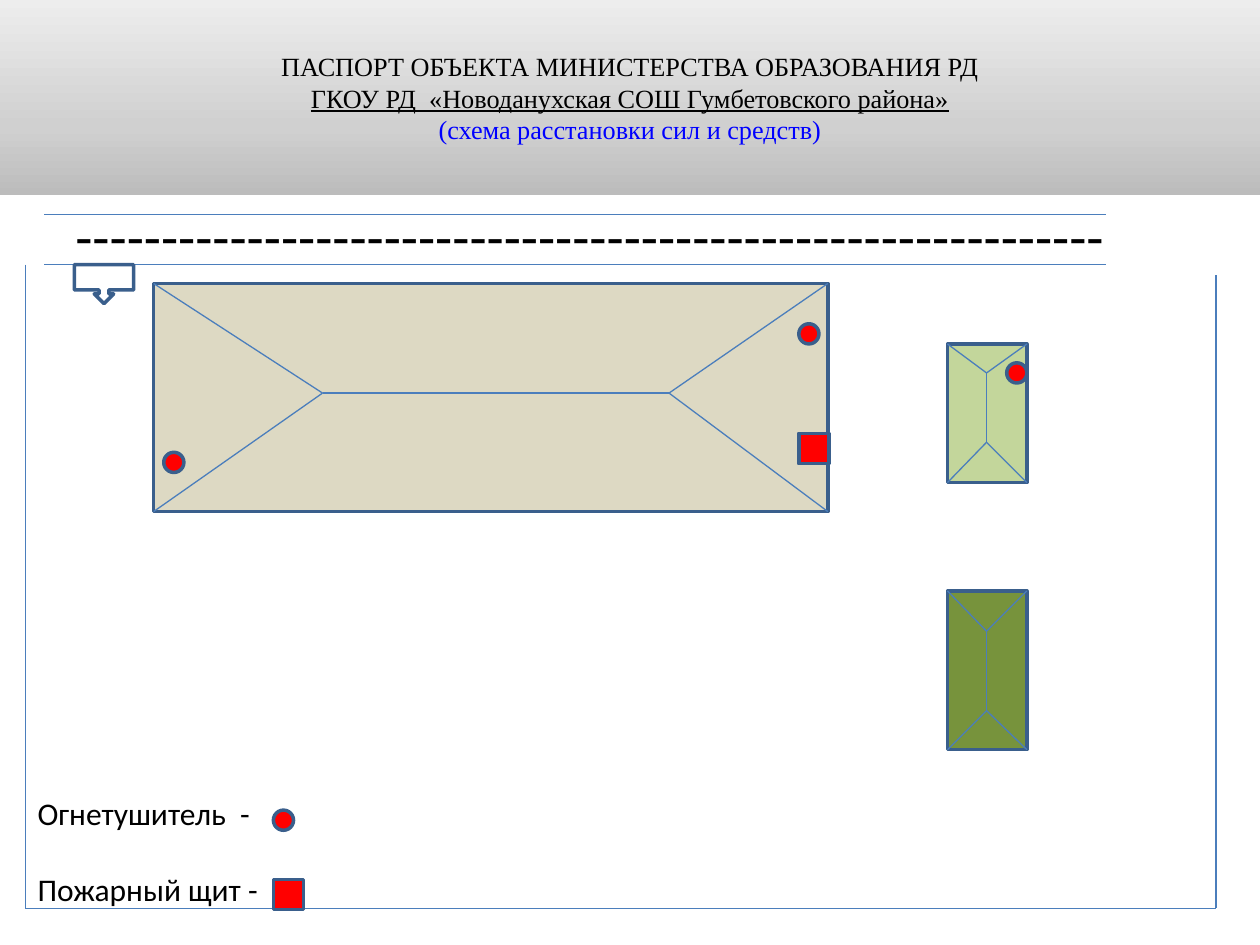
from copy import deepcopy

from lxml import etree
from pptx import Presentation
from pptx.dml.color import RGBColor
from pptx.enum.shapes import MSO_CONNECTOR, MSO_SHAPE
from pptx.enum.text import MSO_ANCHOR, PP_ALIGN
from pptx.oxml.ns import qn
from pptx.util import Inches, Pt

RECTANGLE = MSO_SHAPE.RECTANGLE
CIRCLE = MSO_SHAPE.FLOWCHART_CONNECTOR
CALLOUT = MSO_SHAPE.DOWN_ARROW_CALLOUT
STRAIGHT = MSO_CONNECTOR.STRAIGHT
CENTER = PP_ALIGN.CENTER
TOP, MIDDLE = MSO_ANCHOR.TOP, MSO_ANCHOR.MIDDLE

BLACK = RGBColor(0x00, 0x00, 0x00)
WHITE = RGBColor(0xFF, 0xFF, 0xFF)
BLUE = RGBColor(0x00, 0x00, 0xFF)
RED = RGBColor(0xFF, 0x00, 0x00)
OUTLINE = RGBColor(0x3A, 0x5F, 0x8C)
THIN_LINE = RGBColor(0x4B, 0x7E, 0xBC)
BEIGE = RGBColor(0xDD, 0xD9, 0xC3)
LIGHT_GREEN = RGBColor(0xC3, 0xD6, 0x9B)
DARK_GREEN = RGBColor(0x77, 0x93, 0x3C)
HEADER_STOPS = [
    (0, RGBColor(0xBC, 0xBC, 0xBC)),
    (0.35, RGBColor(0xD0, 0xD0, 0xD0)),
    (1, RGBColor(0xED, 0xED, 0xED)),
]

SLIDE_WIDTH, SLIDE_HEIGHT = 10, 7.5
HEADER_HEIGHT = 1.55
TITLE_LINES = [
    ("ПАСПОРТ ОБЪЕКТА МИНИСТЕРСТВА ОБРАЗОВАНИЯ РД", BLACK, False),
    ("ГКОУ РД  «Новоданухская СОШ Гумбетовского района»", BLACK, True),
    ("(схема расстановки сил и средств)", BLUE, False),
]
ROAD_MARKING = "-" * 60
LEGEND = ["Огнетушитель  -", "Пожарный щит -"]

# Each building: left, top, width, height, colour, ridge start, ridge end
BUILDINGS = [
    (1.22, 2.25, 5.35, 1.81, BEIGE, (2.56, 3.12), (5.31, 3.12)),
    (7.52, 2.73, 0.63, 1.1, LIGHT_GREEN, (7.83, 2.96), (7.83, 3.51)),
    (7.52, 4.69, 0.63, 1.26, DARK_GREEN, (7.83, 5.01), (7.83, 5.64)),
]
ROAD_LEFT, ROAD_RIGHT = 0.35, 8.78
ROAD_EDGES = [1.7, 2.1]
FENCE = [(0.2, 2.1), (0.2, 7.21), (9.65, 7.21), (9.65, 2.18)]
EXTINGUISHER_SIZE, SHIELD_SIZE = 0.16, 0.24
EXTINGUISHERS = [(6.34, 2.57), (1.3, 3.59), (7.99, 2.88), (2.17, 6.43)]
SHIELDS = [(6.34, 3.44), (2.17, 6.98)]


def add_block(slide, kind, left, top, width, height, color):
    shape = slide.shapes.add_shape(
        kind, Inches(left), Inches(top), Inches(width), Inches(height))
    shape.shadow.inherit = False
    shape.fill.solid()
    shape.fill.fore_color.rgb = color
    shape.line.color.rgb = OUTLINE
    shape.line.width = Pt(2)
    return shape


def add_line(slide, start, end):
    line = slide.shapes.add_connector(
        STRAIGHT, *(Inches(value) for value in (*start, *end)))
    line.line.color.rgb = THIN_LINE
    line.line.width = Pt(0.75)
    etree.SubElement(line._element.spPr, qn("a:effectLst"))


def format_run(paragraph, font_name, size, color=BLACK, underline=False):
    font = paragraph.runs[0].font
    font.name = font_name
    font.size = Pt(size)
    font.color.rgb = color
    font.underline = underline


def add_text(slide, left, top, width, height, lines, size, gap=0):
    box = slide.shapes.add_textbox(
        Inches(left), Inches(top), Inches(width), Inches(height))
    frame = box.text_frame
    frame.word_wrap = True
    frame.vertical_anchor = TOP
    frame.text = "\n".join(lines)
    for paragraph in frame.paragraphs:
        format_run(paragraph, "Calibri", size)
    for paragraph in frame.paragraphs[1:]:
        paragraph.space_before = Pt(gap)


def add_header(slide):
    header = add_block(slide, RECTANGLE, 0, 0, SLIDE_WIDTH, HEADER_HEIGHT, WHITE)
    header.line.fill.background()
    header.fill.gradient()
    header.fill.gradient_angle = 90
    stop_list = header._element.spPr.find(qn("a:gradFill")).find(qn("a:gsLst"))
    stop_list.insert(1, deepcopy(stop_list[0]))
    for stop, (position, color) in zip(header.fill.gradient_stops, HEADER_STOPS):
        stop.position = position
        stop.color.rgb = color
    frame = header.text_frame
    frame.word_wrap = True
    frame.vertical_anchor = MIDDLE
    frame.text = "\n".join(text for text, _, _ in TITLE_LINES)
    for paragraph, (_, color, underline) in zip(frame.paragraphs, TITLE_LINES):
        paragraph.alignment = CENTER
        format_run(paragraph, "Times New Roman", 15, color, underline)


def add_building(slide, left, top, width, height, color, start, end):
    add_block(slide, RECTANGLE, left, top, width, height, color)
    add_line(slide, start, end)
    horizontal = start[1] == end[1]
    for x in (left, left + width):
        for y in (top, top + height):
            near_start = x == left if horizontal else y == top
            add_line(slide, (x, y), start if near_start else end)


def main():
    presentation = Presentation()
    presentation.slide_width = Inches(SLIDE_WIDTH)
    presentation.slide_height = Inches(SLIDE_HEIGHT)
    slide = presentation.slides.add_slide(presentation.slide_layouts[6])

    add_text(slide, 0.5, HEADER_HEIGHT, 9, 0.65, [ROAD_MARKING], 32)
    add_header(slide)
    for building in BUILDINGS:
        add_building(slide, *building)
    for y in ROAD_EDGES:
        add_line(slide, (ROAD_LEFT, y), (ROAD_RIGHT, y))
    add_block(slide, CALLOUT, 0.59, 2.1, 0.47, 0.31, WHITE)
    for start, end in zip(FENCE, FENCE[1:]):
        add_line(slide, start, end)

    add_text(slide, 0.2, 6.25, 5, 1, LEGEND, 18, gap=22)
    for kind, size, places in (
        (CIRCLE, EXTINGUISHER_SIZE, EXTINGUISHERS),
        (RECTANGLE, SHIELD_SIZE, SHIELDS),
    ):
        for left, top in places:
            add_block(slide, kind, left, top, size, size, RED)

    presentation.save("out.pptx")


if __name__ == "__main__":
    main()
